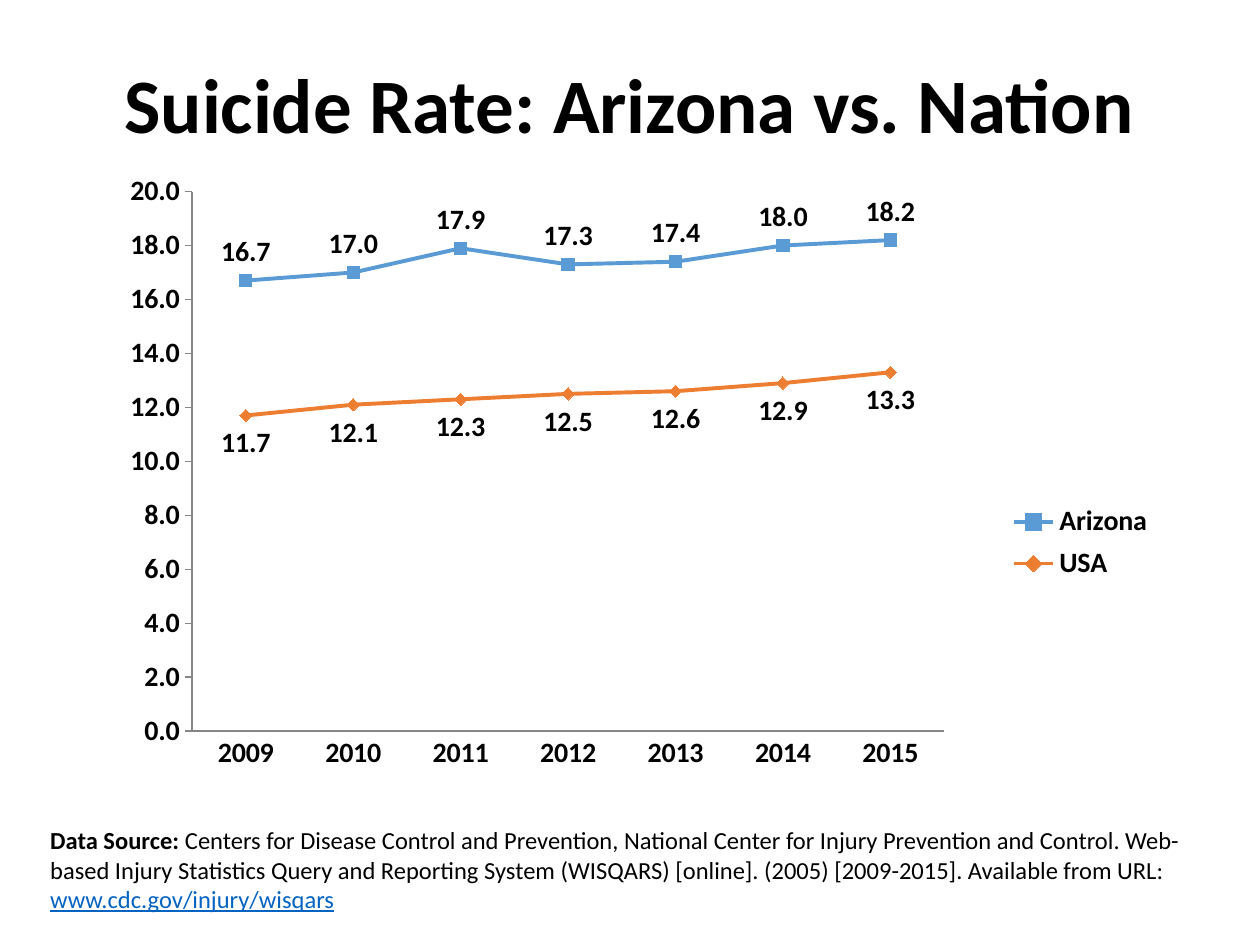
from dataclasses import dataclass

from lxml.etree import SubElement
from pptx import Presentation
from pptx.chart.data import CategoryChartData
from pptx.dml.color import RGBColor
from pptx.enum.chart import (XL_CHART_TYPE, XL_LABEL_POSITION,
                             XL_LEGEND_POSITION, XL_MARKER_STYLE, XL_TICK_MARK)
from pptx.enum.text import MSO_ANCHOR, PP_ALIGN
from pptx.oxml.ns import qn
from pptx.util import Pt


@dataclass(frozen=True)
class Theme:
    font: str = "Calibri"
    text: RGBColor = RGBColor(0, 0, 0)
    link: RGBColor = RGBColor(0x05, 0x63, 0xC1)
    axis: RGBColor = RGBColor(0x86, 0x86, 0x86)
    arizona: RGBColor = RGBColor(0x5B, 0x9B, 0xD5)
    usa: RGBColor = RGBColor(0xED, 0x7D, 0x31)
    title_size: int = 44
    chart_size: int = 16
    source_size: int = 14


THEME = Theme()
YEARS = [str(year) for year in range(2009, 2016)]
RATES = {
    "Arizona": [16.7, 17.0, 17.9, 17.3, 17.4, 18.0, 18.2],
    "USA": [11.7, 12.1, 12.3, 12.5, 12.6, 12.9, 13.3],
}
# Per series: colour, marker, marker size, label position
SERIES_LOOKS = {
    "Arizona": (THEME.arizona, XL_MARKER_STYLE.SQUARE, 7, XL_LABEL_POSITION.ABOVE),
    "USA": (THEME.usa, XL_MARKER_STYLE.DIAMOND, 7, XL_LABEL_POSITION.BELOW),
}
SOURCE = [
    ("Data Source: ", {"bold": True}),
    ("Centers for Disease Control and Prevention, National Center for Injury "
     "Prevention and Control. Web-based Injury Statistics Query and Reporting "
     "System (WISQARS) [online]. (2005) [2009-2015]. Available from URL: ", {}),
    ("www.cdc.gov/injury/wisqars", {"color": THEME.link, "underline": True}),
]


def set_format(target, values):
    for name, value in values.items():
        setattr(target, name, value)


def set_font(font, size, color=THEME.text, **extra):
    set_format(font, {"name": THEME.font, "size": Pt(size), **extra})
    font.color.rgb = color


def add_frame(slide, box):
    frame = slide.shapes.add_textbox(*map(Pt, box)).text_frame
    frame.word_wrap = True
    return frame


def set_layout(parent, after, **values):
    """Place a chart part by fractions of the chart area."""
    for old in parent.findall(qn("c:layout")):
        parent.remove(old)
    layout = SubElement(parent, qn("c:layout"))
    manual = SubElement(layout, qn("c:manualLayout"))
    for tag, value in values.items():
        SubElement(manual, qn(f"c:{tag}")).set("val", str(value))
    parent.insert(after, layout)


def add_title(slide, box):
    frame = add_frame(slide, box)
    frame.vertical_anchor = MSO_ANCHOR.MIDDLE
    heading = frame.paragraphs[0]
    set_format(heading, {"alignment": PP_ALIGN.CENTER, "line_spacing": 0.9})
    run = heading.add_run()
    run.text = "Suicide Rate: Arizona vs. Nation"
    set_font(run.font, THEME.title_size, bold=True)


def add_rate_chart(slide, box):
    rates = CategoryChartData(number_format="0.0")
    rates.categories = YEARS
    for name, values in RATES.items():
        rates.add_series(name, values)
    chart = slide.shapes.add_chart(
        XL_CHART_TYPE.LINE_MARKERS, *map(Pt, box), rates).chart
    set_format(chart, {"has_title": False, "has_legend": True})
    set_font(chart.font, THEME.chart_size, bold=True)

    # Axes
    set_format(chart.value_axis, {
        "minimum_scale": 0, "maximum_scale": 20, "major_unit": 2,
        "has_major_gridlines": False, "major_tick_mark": XL_TICK_MARK.OUTSIDE})
    set_format(chart.value_axis.tick_labels, {
        "number_format": "0.0", "number_format_is_linked": False})
    chart.category_axis.major_tick_mark = XL_TICK_MARK.NONE
    for axis in (chart.value_axis, chart.category_axis):
        axis.format.line.color.rgb = THEME.axis
        axis.format.line.width = Pt(0.75)

    # Series
    plot = chart.plots[0]
    plot.vary_by_categories = False
    for series in plot.series:
        color, marker, size, position = SERIES_LOOKS[series.name]
        series.smooth = False
        set_format(series.marker, {"style": marker, "size": size})
        series.format.line.width = Pt(2.25)
        series.marker.format.fill.solid()
        series.marker.format.fill.fore_color.rgb = color
        for line in (series.format.line, series.marker.format.line):
            line.color.rgb = color
        labels = series.data_labels
        set_format(labels, {
            "show_value": True, "position": position,
            "number_format": "0.0", "number_format_is_linked": False})
        set_font(labels.font, THEME.chart_size, bold=True)

    # Legend and plot area
    set_format(chart.legend, {
        "position": XL_LEGEND_POSITION.RIGHT, "include_in_layout": False})
    set_font(chart.legend.font, THEME.chart_size, bold=True)
    plot_area = chart.plots[0]._element.getparent()
    set_layout(plot_area, 0, layoutTarget="inner", xMode="edge", yMode="edge",
               x=0.1, y=0.07, w=0.69, h=0.83)
    set_layout(chart.legend._element, 1, xMode="edge", yMode="edge",
               x=0.83, y=0.54, w=0.17, h=0.14)


def add_source(slide, box):
    citation = add_frame(slide, box).paragraphs[0]
    for text, look in SOURCE:
        run = citation.add_run()
        run.text = text
        set_font(run.font, THEME.source_size, **look)


def main():
    deck = Presentation()
    set_format(deck, {"slide_width": Pt(720), "slide_height": Pt(540)})
    slide = deck.slides.add_slide(deck.slide_layouts[6])
    add_title(slide, (36, 21.6, 648, 80.6))
    add_rate_chart(slide, (47.5, 83.5, 622.8, 371.5))
    add_source(slide, (21.6, 468, 678.2, 58.3))
    deck.save("out.pptx")


if __name__ == "__main__":
    main()
